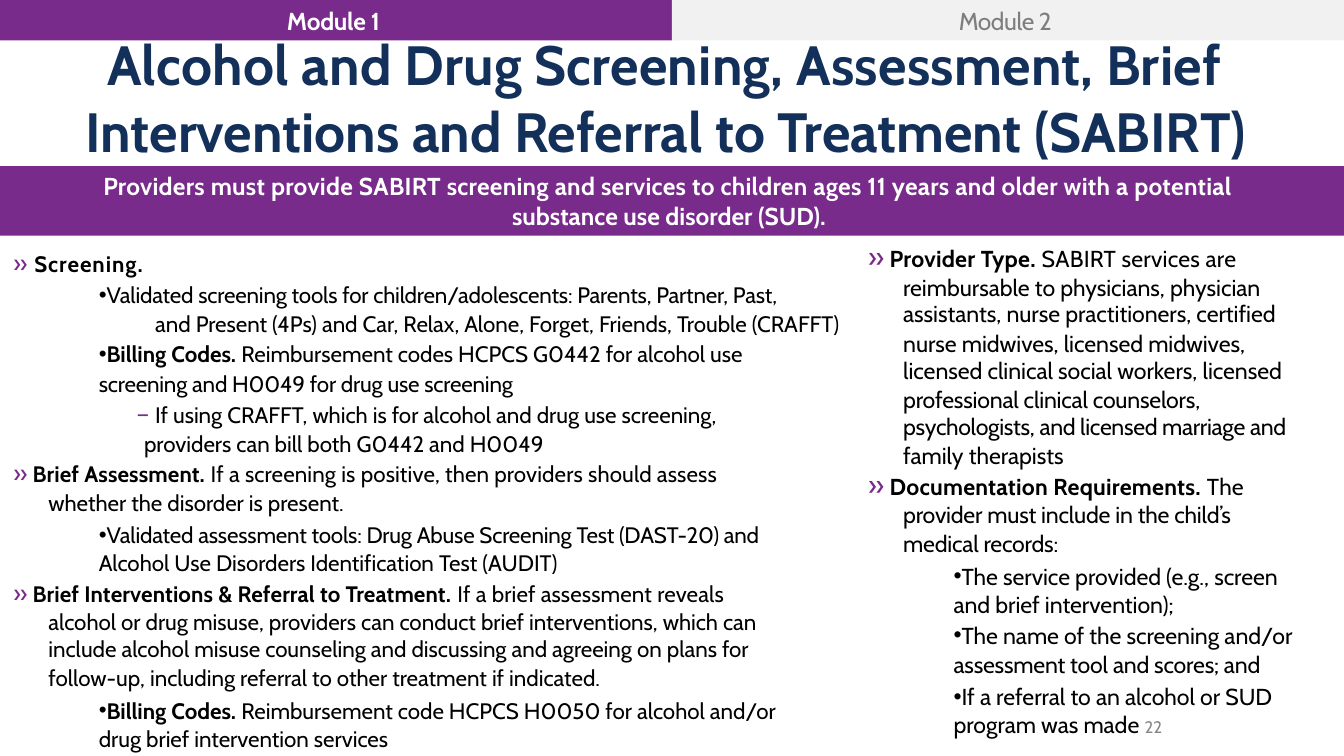
"""Build the SABIRT screening, assessment and referral slide."""
from lxml import etree
from pptx import Presentation
from pptx import util as u
from pptx.dml.color import RGBColor
from pptx.enum import shapes, text
from pptx.oxml.ns import qn

PURPLE, WHITE, GRAY, NAVY, BLACK = "782B8A", "FFFFFF", "F1F1F1", "13305A", "000000"
THEME = {
    "tab on": (17.5, WHITE, True, "Cabin"),
    "tab off": (17.5, "7E7E7E", False, "Cabin"),
    "title": (39.5, NAVY, True, "Cabin"),
    "mark": (18, PURPLE, False, "Cabin"),
    "dash": (20, PURPLE, False, "Calibri"),
    "bold": (16, BLACK, True, "Cabin"),
    "plain": (16, BLACK, False, "Cabin"),
    "big mark": (20.5, PURPLE, False, "Cabin"),
    "big bold": (16.5, BLACK, True, "Cabin"),
    "big": (16.5, BLACK, False, "Cabin"),
    "page": (12, "888888", False, "Cabin"),
}
LEFT, MID, RIGHT = text.PP_ALIGN.LEFT, text.PP_ALIGN.CENTER, text.PP_ALIGN.RIGHT
KINDS = {
    "head": (0, 0, LEFT),
    "wrap": (0.89, 0, LEFT),
    "point": (1.27, 0.89, LEFT),
    "more": (2.16, 0, LEFT),
    "deep": (3.3, 0, LEFT),
    "mid": (0, 0, MID),
    "end": (0, 0, RIGHT),
}


def place(shape, left, top, width, height, fill=None):
    """Set the box of a shape and its fill."""
    shape.left, shape.top = u.Cm(left), u.Cm(top)
    shape.width, shape.height = u.Cm(width), u.Cm(height)
    if fill:
        shape.fill.solid()
        shape.fill.fore_color.rgb = RGBColor.from_string(fill)


def write(shape, inset, lines):
    """Write lines of (kind, leading, space before, runs of (text, style, tracking))."""
    frame = shape.text_frame
    frame.word_wrap = True
    frame.auto_size = text.MSO_AUTO_SIZE.NONE
    frame.vertical_anchor = text.MSO_ANCHOR.TOP
    frame.margin_left = frame.margin_right = frame.margin_bottom = 0
    frame.margin_top = u.Cm(inset)
    for i, (kind, lead, before, runs) in enumerate(lines):
        para = frame.paragraphs[0] if i == 0 else frame.add_paragraph()
        margin, indent, align = KINDS[kind]
        props = para._p.get_or_add_pPr()
        props.set("marL", str(u.Cm(margin)))
        props.set("indent", str(u.Cm(indent)))
        if kind == "point":
            etree.SubElement(props, qn("a:buChar")).set("char", "•")
        else:
            etree.SubElement(props, qn("a:buNone"))
        para.alignment = align
        para.line_spacing = u.Pt(lead)
        para.space_before, para.space_after = u.Pt(before), u.Pt(0)
        for words, style, track in runs:
            run = para.add_run()
            run.text = words
            size, color, bold, face = THEME[style]
            run.font.size, run.font.bold, run.font.name = u.Pt(size), bold, face
            run.font.color.rgb = RGBColor.from_string(color)
            run._r.get_or_add_rPr().set("spc", str(round(track * 100)))


deck = Presentation()
deck.slide_width, deck.slide_height = u.Cm(33.87), u.Cm(19.05)
slide = deck.slides.add_slide(deck.slide_layouts[4])
holders = {h.placeholder_format.idx: h for h in slide.placeholders}

tabs = [(1, "Module 1 ", "tab on", PURPLE, -0.2), (3, "Module 2 ", "tab off", GRAY, -0.3)]
for i, (key, label, style, fill, track) in enumerate(tabs):
    place(holders[key], 16.93 * i, 0, 16.94, 1.02, fill)
    write(holders[key], 0.08, [("mid", 23, 0, [(label, style, track)])])

title = slide.shapes.title
place(title, 0, 1.02, 33.87, 3.17)
write(title, 0, [
    ("mid", 40, 0, [("Alcohol and Drug Screening, Assessment, Brief ", "title", 0.2)]),
    ("mid", 48, 0, [("Interventions and Referral to Treatment (SABIRT) ", "title", 0)]),
])

banner = slide.shapes.add_shape(shapes.MSO_SHAPE.RECTANGLE, 0, 0, 0, 0)
banner.shadow.inherit = False
banner.line.fill.background()
place(banner, 0, 4.19, 33.87, 1.75, PURPLE)
write(banner, 0.13, [
    ("mid", 21, 0, [("Providers must provide SABIRT screening and services to children ages 11 years "
                     "and older with a potential ", "tab on", 0.2)]),
    ("mid", 21, 0, [("substance use disorder (SUD). ", "tab on", 0)]),
])

place(holders[2], 0.33, 5.94, 20.96, 12.95)
write(holders[2], 0.1, [
    ("head", 27, 0, [("»", "mark", 0.7), (" Screening.", "bold", 0.7)]),
    ("point", 20, 2, [("Validated screening tools for children/adolescents: Parents, Partner, Past,",
                       "plain", -0.1)]),
    ("end", 20, 0.1, [("and Present (4Ps) and Car, Relax, Alone, Forget, Friends, Trouble (CRAFFT) ",
                       "plain", 0)]),
    ("point", 19, 3, [("Billing Codes. ", "bold", 0),
                      ("Reimbursement codes HCPCS G0442 for alcohol use", "plain", 0)]),
    ("more", 21, 0, [("screening and H0049 for drug use screening", "plain", -0.1)]),
    ("mid", 18, 5.2, [("‒", "dash", 0),
                      (" If using CRAFFT, which is for alcohol and drug use screening, ", "plain", 0)]),
    ("deep", 20, 0, [("providers can bill both G0442 and H0049", "plain", 0)]),
    ("head", 18, 4, [("»", "mark", 0.1), (" Brief Assessment. ", "bold", 0.1),
                     ("If a screening is positive, then providers should assess", "plain", 0.1)]),
    ("wrap", 20, 0, [("whether the disorder is present.", "plain", 0)]),
    ("point", 20, 3, [("Validated assessment tools: Drug Abuse Screening Test (DAST-20) and",
                       "plain", -0.1)]),
    ("more", 20, 0.1, [("Alcohol Use Disorders Identification Test (AUDIT)", "plain", 0)]),
    ("head", 18, 4, [("»", "mark", 0.1),
                     (" Brief Interventions & Referral to Treatment. ", "bold", 0.1),
                     ("If a brief assessment reveals", "plain", 0.1)]),
    ("wrap", 20, 0, [("alcohol or drug misuse, providers can conduct brief interventions, which can",
                      "plain", 0)]),
    ("wrap", 19, 0.1, [("include alcohol misuse counseling and discussing and agreeing on plans for",
                        "plain", 0)]),
    ("wrap", 21, 0, [("follow-up, including referral to other treatment if indicated.", "plain", 0)]),
    ("point", 20, 3, [("Billing Codes. ", "bold", 0),
                      ("Reimbursement code HCPCS H0050 for alcohol and/or", "plain", 0)]),
    ("more", 20, 0.1, [("drug brief intervention services", "plain", 0)]),
])

place(holders[4], 21.87, 5.94, 11.35, 12.67)
write(holders[4], 0.3, [
    ("head", 18, 0, [("»", "big mark", 0.2), (" Provider Type. ", "big bold", 0.2),
                     ("SABIRT services are", "big", 0.2)]),
    ("wrap", 20, 0, [("reimbursable to physicians, physician", "big", 0)]),
    ("wrap", 19, 0.1, [("assistants, nurse practitioners, certified", "big", 0)]),
    ("wrap", 21, 0, [("nurse midwives, licensed midwives,", "big", 0)]),
    ("wrap", 19, 0.1, [("licensed clinical social workers, licensed", "big", 0)]),
    ("wrap", 21, 0, [("professional clinical counselors,", "big", -0.1)]),
    ("wrap", 19, 0.1, [("psychologists, and licensed marriage and", "big", -0.2)]),
    ("wrap", 21, 0, [("family therapists", "big", 0)]),
    ("head", 19, 4, [("»", "big mark", 0.2), (" Documentation Requirements. ", "big bold", 0.2),
                     ("The", "big", 0.2)]),
    ("wrap", 19, 0, [("provider must include in the child’s", "big", -0.1)]),
    ("wrap", 21, 0, [("medical records:", "big", -0.1)]),
    ("point", 20, 3, [("The service provided (e.g., screen", "big", 0)]),
    ("more", 20, 0.1, [("and brief intervention);", "big", 0)]),
    ("point", 19, 3, [("The name of the screening and/or", "big", 0)]),
    ("more", 21, 0, [("assessment tool and scores; and", "big", -0.1)]),
    ("point", 20, 3, [("If a referral to an alcohol or SUD", "big", 0)]),
    ("more", 20, 0.1, [("program was made ", "big", 0), ("22", "page", 0)]),
])

deck.save("out.pptx")
